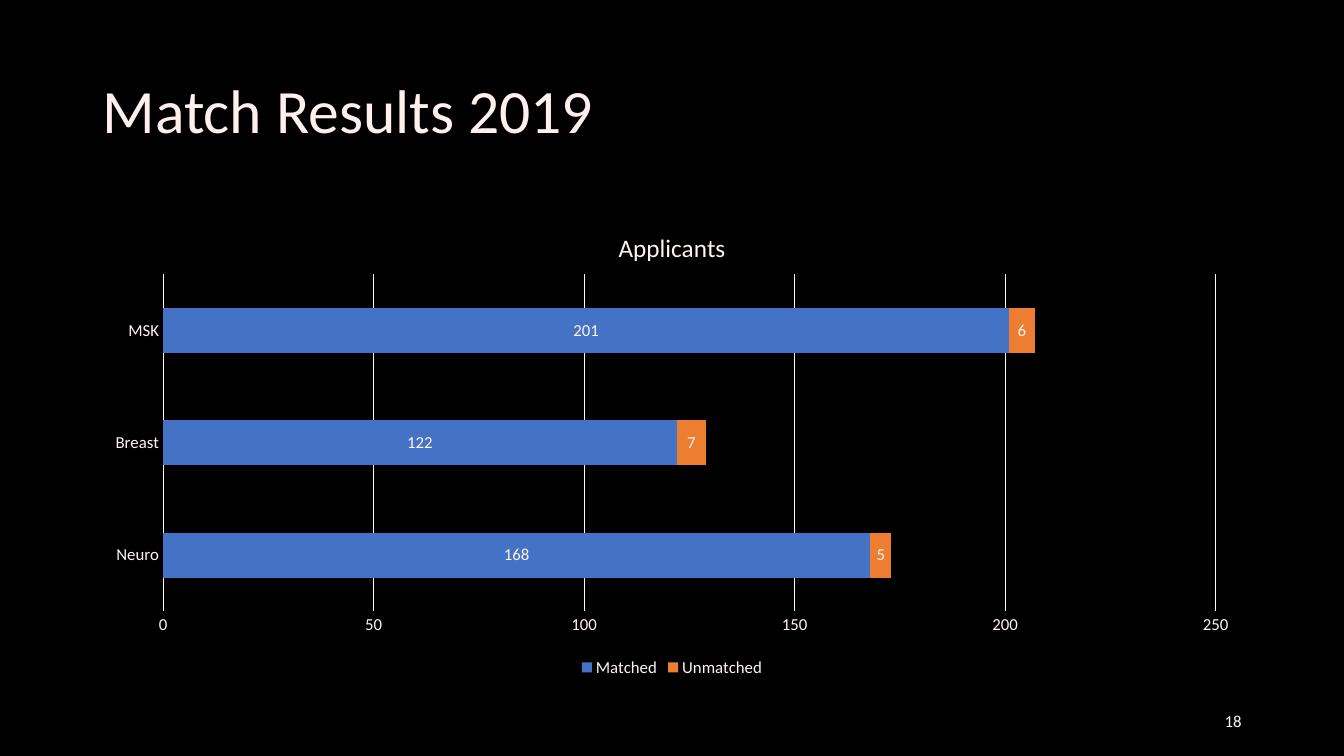
from lxml import etree
from pptx import Presentation
from pptx.chart.data import CategoryChartData
from pptx.dml.color import RGBColor
from pptx.enum.chart import XL_CHART_TYPE as ChartType
from pptx.enum.chart import XL_LABEL_POSITION as LabelPosition
from pptx.enum.chart import XL_LEGEND_POSITION as LegendPosition
from pptx.enum.chart import XL_TICK_MARK as TickMark
from pptx.enum.text import MSO_ANCHOR as Anchor
from pptx.enum.text import PP_ALIGN as Align
from pptx.oxml.ns import qn
from pptx.util import Pt

TEXT = "FFF5F4"
LINE = "FFFDFC"


def color(hex_string):
    return RGBColor.from_string(hex_string)


def write(frame, text, size=12, fill=TEXT, align=Align.LEFT, spacing=1.0):
    frame.text = text
    paragraph = frame.paragraphs[0]
    paragraph.alignment = align
    paragraph.line_spacing = spacing
    font = paragraph.runs[0].font
    font.name, font.size, font.bold = "Calibri", Pt(size), False
    font.color.rgb = color(fill)


presentation = Presentation()
presentation.slide_width = Pt(960)
presentation.slide_height = Pt(540)
slide = presentation.slides.add_slide(presentation.slide_layouts[5])
slide.background.fill.solid()
slide.background.fill.fore_color.rgb = color("000000")

# Title
title = slide.shapes.title
title.left, title.top, title.width, title.height = Pt(66), Pt(28.75), Pt(828), Pt(104.4)
title.text_frame.vertical_anchor = Anchor.MIDDLE
write(title.text_frame, "Match Results 2019", size=44, fill="FFF0EE", spacing=0.9)

# Chart of applicants by specialty
data = CategoryChartData()
data.categories = ["Neuro", "Breast", "MSK"]
data.add_series("Matched", [168, 122, 201])
data.add_series("Unmatched", [5, 7, 6])
chart = slide.shapes.add_chart(
    ChartType.BAR_STACKED, Pt(66), Pt(144), Pt(828), Pt(342.75), data).chart
chart.font.name, chart.font.size = "Calibri", Pt(12)
chart.font.color.rgb = color(TEXT)
chart.has_title = True
write(chart.chart_title.text_frame, "Applicants", size=18, align=Align.CENTER)
chart.has_legend = True
chart.legend.position = LegendPosition.BOTTOM
chart.legend.include_in_layout = False

# Axes
categories, values = chart.category_axis, chart.value_axis
for axis in (categories, values):
    axis.major_tick_mark = axis.minor_tick_mark = TickMark.NONE
values.minimum_scale, values.maximum_scale, values.major_unit = 0, 250, 50
values.format.line.fill.background()
values.has_major_gridlines = True
for line in (categories.format.line, values.major_gridlines.format.line):
    line.color.rgb = color(LINE)
    line.width = Pt(0.75)

# Bars and their labels
plot = chart.plots[0]
plot.gap_width, plot.overlap, plot.vary_by_categories = 150, 100, False
for series, bar_color in zip(plot.series, ("4472C4", "ED7D31")):
    series.format.fill.solid()
    series.format.fill.fore_color.rgb = color(bar_color)
    labels = series.data_labels
    labels.show_value = True
    labels.position = LabelPosition.CENTER
    labels.font.name, labels.font.size = "Calibri", Pt(12)
    labels.font.color.rgb = color("FFF4F2")

# Fixed places of the chart title and the plot area, as shares of the chart
chart_xml = chart._chartSpace.chart
places = (
    ("c:title", 1, {"xMode": "edge", "yMode": "edge", "x": 0.45, "y": 0.05}),
    ("c:plotArea", 0, {"layoutTarget": "inner", "xMode": "edge", "yMode": "edge",
                       "x": 0.061, "y": 0.151, "w": 0.908, "h": 0.703}),
)
for tag, index, settings in places:
    part = chart_xml.find(qn(tag))
    for old_layout in part.findall(qn("c:layout")):
        part.remove(old_layout)
    layout = etree.Element(qn("c:layout"))
    manual = etree.SubElement(layout, qn("c:manualLayout"))
    for name, value in settings.items():
        etree.SubElement(manual, qn("c:" + name)).set("val", str(value))
    part.insert(index, layout)

# Slide number
number = slide.shapes.add_textbox(Pt(678), Pt(500.5), Pt(216), Pt(28.75)).text_frame
number.word_wrap = True
number.vertical_anchor = Anchor.MIDDLE
write(number, "18", fill="FFF4F2", align=Align.RIGHT)

presentation.save("out.pptx")
